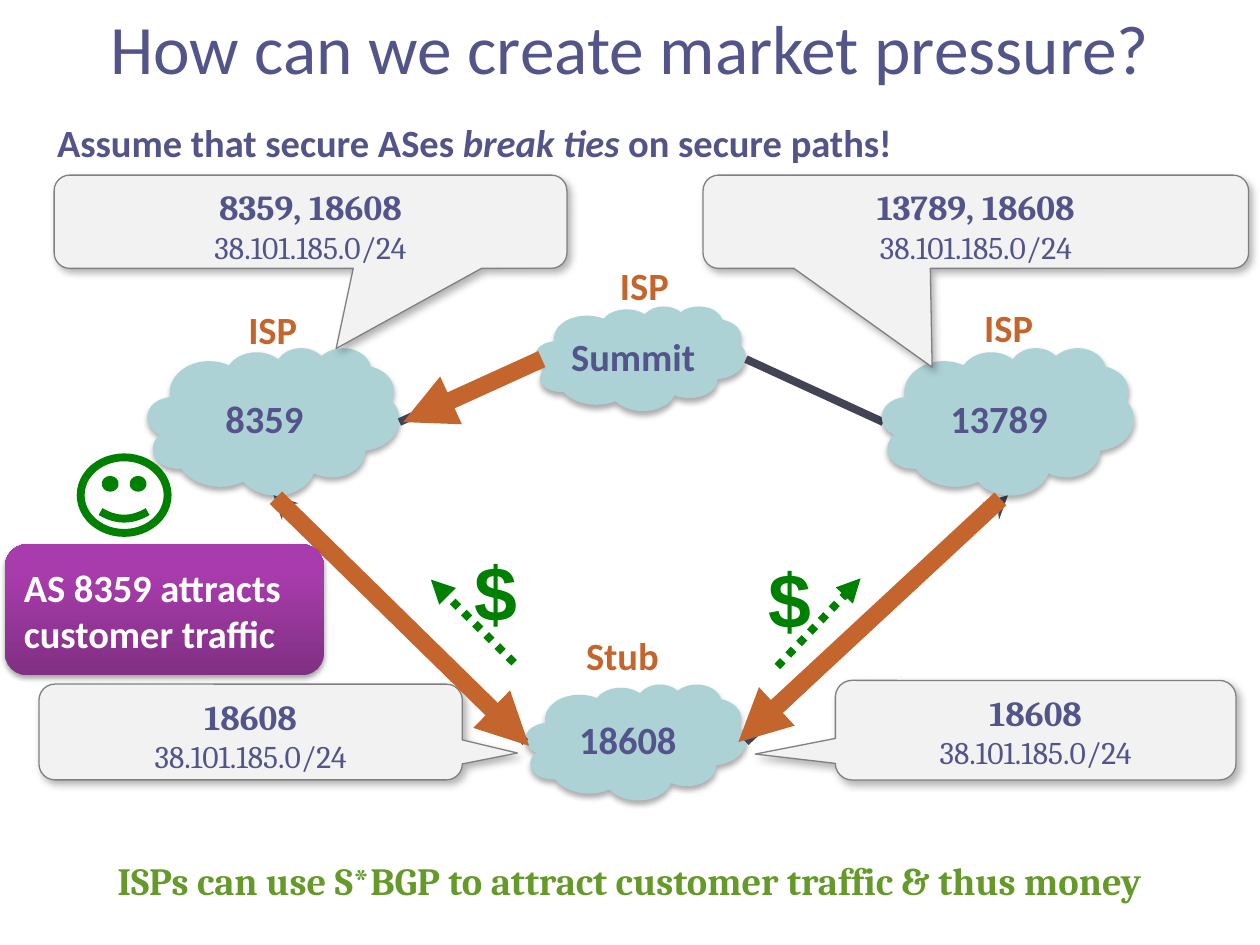
from lxml.etree import SubElement
from pptx import Presentation
from pptx.dml.color import RGBColor
from pptx.enum.dml import MSO_LINE
from pptx.enum.shapes import MSO_CONNECTOR, MSO_SHAPE
from pptx.enum.text import MSO_ANCHOR, PP_ALIGN
from pptx.oxml.ns import qn
from pptx.util import Emu, Pt

EMU_PER_PX = 9144
INDIGO = RGBColor(0x53, 0x54, 0x8A)
SLATE = RGBColor(0x42, 0x44, 0x56)
ORANGE = RGBColor(0xC4, 0x65, 0x2D)
CLOUD_BLUE = RGBColor(0xAD, 0xD2, 0xD6)
PALE_GRAY = RGBColor(0xF2, 0xF2, 0xF2)
MID_GRAY = RGBColor(0x80, 0x80, 0x80)
GREEN = RGBColor(0x00, 0x80, 0x00)
OLIVE = RGBColor(0x65, 0x9A, 0x2A)
DARK_PURPLE = RGBColor(0x80, 0x30, 0x83)
PURPLE = RGBColor(0xA9, 0x3C, 0xAD)
BLACK = RGBColor(0, 0, 0)
WHITE = RGBColor(0xFF, 0xFF, 0xFF)

CLOUD_SHADOW = (32, 3.5, 2.2, 90)
CALLOUT_SHADOW = (30, 4.5, 2.6, 53)
BANNER_SHADOW = (35, 3.1, 1.8, 90)


def px(*lengths):
    return [Emu(length * EMU_PER_PX) for length in lengths]


def add_run(paragraph, text, size=22, font="Calibri", color=INDIGO, bold=True, italic=False):
    run = paragraph.add_run()
    run.text = text
    run.font.size = Pt(size)
    run.font.name = font
    run.font.color.rgb = color
    run.font.bold = bold
    run.font.italic = italic


def cast_shadow(shape, opacity, blur, distance, angle):
    shape.shadow.inherit = False
    effects = shape._element.spPr.find(qn("a:effectLst"))
    outer = SubElement(effects, qn("a:outerShdw"), blurRad=str(Pt(blur)), dist=str(Pt(distance)),
                       dir=str(angle * 60000), algn="ctr", rotWithShape="0")
    tint = SubElement(outer, qn("a:srgbClr"), val=str(BLACK))
    SubElement(tint, qn("a:alpha"), val=str(opacity * 1000))


class Diagram:
    def __init__(self, presentation):
        self.slide = presentation.slides.add_slide(presentation.slide_layouts[5])
        self.shapes = self.slide.shapes

    def title(self, text, box):
        heading = self.shapes.title
        heading.left, heading.top, heading.width, heading.height = px(*box)
        self.paragraphs(heading.text_frame, [[(text, {"size": 39.6, "bold": False})]])

    def paragraphs(self, frame, lines, align=PP_ALIGN.CENTER, anchor=MSO_ANCHOR.MIDDLE, wrap=True):
        frame.word_wrap = wrap
        frame.vertical_anchor = anchor
        for index, runs in enumerate(lines):
            paragraph = frame.add_paragraph() if index else frame.paragraphs[0]
            paragraph.alignment = align
            for text, style in runs:
                add_run(paragraph, text, **style)

    def shape(self, preset, box, fill=None, line=None, weight=1, shadow=None):
        shape = self.shapes.add_shape(preset, *px(*box))
        shape.shadow.inherit = False
        if fill is None:
            shape.fill.background()
        else:
            shape.fill.solid()
            shape.fill.fore_color.rgb = fill
        if line is None:
            shape.line.fill.background()
        else:
            shape.line.color.rgb = line
            shape.line.width = Pt(weight)
        if shadow:
            cast_shadow(shape, *shadow)
        return shape

    def label(self, box, *runs, align=PP_ALIGN.CENTER):
        shape = self.shape(MSO_SHAPE.ROUNDED_RECTANGLE, box)
        self.paragraphs(shape.text_frame, [runs], align)

    def cloud(self, name, box):
        cloud = self.shape(MSO_SHAPE.CLOUD, box, CLOUD_BLUE, shadow=CLOUD_SHADOW)
        self.paragraphs(cloud.text_frame, [[(name, {})]], wrap=False)

    def callout(self, route, box, tip):
        callout = self.shape(MSO_SHAPE.ROUNDED_RECTANGULAR_CALLOUT, box, PALE_GRAY,
                             MID_GRAY, 0.75, CALLOUT_SHADOW)
        callout.adjustments[0], callout.adjustments[1] = tip
        self.paragraphs(callout.text_frame, [
            [(route, {"size": 20, "font": "Cambria"})],
            [("38.101.185.0/24", {"size": 18, "font": "Cambria", "bold": False})],
        ], anchor=MSO_ANCHOR.TOP)

    def line(self, start, end, color, weight, head=None, tail=None, dash=None):
        link = self.shapes.add_connector(MSO_CONNECTOR.STRAIGHT, *px(*start, *end))
        link.line.color.rgb = color
        link.line.width = Pt(weight)
        if dash:
            link.line.dash_style = dash
        outline = link.line._get_or_add_ln()
        for tag, arrow in (("a:headEnd", head), ("a:tailEnd", tail)):
            if arrow:
                SubElement(outline, qn(tag), type=arrow)
        SubElement(link._element.spPr, qn("a:effectLst"))

    def text(self, text, box, align=PP_ALIGN.LEFT, before=0, **style):
        frame = self.shapes.add_textbox(*px(*box)).text_frame
        self.paragraphs(frame, [[(text, style)]], align, MSO_ANCHOR.TOP)
        frame.paragraphs[0].space_before = Pt(before)

    def banner(self, text, box):
        banner = self.shape(MSO_SHAPE.ROUNDED_RECTANGLE, box, PURPLE, shadow=BANNER_SHADOW)
        banner.fill.gradient()
        banner.fill.gradient_angle = 90
        bottom, top = banner.fill.gradient_stops
        bottom.color.rgb, bottom.position = DARK_PURPLE, 0
        top.color.rgb, top.position = PURPLE, 0.8
        self.paragraphs(banner.text_frame, [[(text, {"color": WHITE})]], PP_ALIGN.LEFT)


def main():
    presentation = Presentation()
    presentation.slide_width, presentation.slide_height = px(1000, 750)
    diagram = Diagram(presentation)
    diagram.title("How can we create market pressure?", (0, 0, 1000, 75))

    for left, top in ((458, 192), (747, 226), (163, 227)):
        diagram.label((left, top, 107, 68), ("ISP", {"color": ORANGE}))
    diagram.label((452, 486, 107, 68), ("Stub", {"color": ORANGE}), align=PP_ALIGN.LEFT)

    diagram.cloud("8359", (117, 276, 200, 117))
    diagram.cloud("Summit", (425, 243, 167, 83))
    diagram.cloud("18608", (417, 543, 175, 92))
    for start, end, tail in (
        ((592, 589), (800, 393), "stealth"),
        ((417, 589), (217, 393), "stealth"),
        ((317, 335), (426, 285), None),
        ((592, 285), (701, 335), None),
    ):
        diagram.line(start, end, SLATE, 4.5, tail=tail)
    diagram.cloud("13789", (700, 276, 200, 117))

    diagram.callout("18608", (31, 543, 336, 76), (0.63, 0.22))
    diagram.callout("8359, 18608", (43, 139, 407, 74), (0.05, 1.36))
    for start, end in (
        ((586, 589), (794, 396)),
        ((420, 592), (219, 395)),
        ((320, 335), (430, 285)),
    ):
        diagram.line(start, end, ORANGE, 10, head="triangle")
    diagram.shape(MSO_SHAPE.SMILEY_FACE, (64, 363, 69, 60), WHITE, GREEN, 4.5)
    diagram.callout("18608", (663, 540, 318, 79), (-0.7, 0.24))
    diagram.callout("13789, 18608", (558, 139, 433, 74), (-0.08, 1.56))

    diagram.text("ISPs can use S*BGP to attract customer traffic & thus money",
                 (-17, 675, 1033, 49), PP_ALIGN.CENTER, before=4.4, font="Cambria", color=OLIVE)
    for start, end, dollar_box in (
        ((408, 526), (342, 460), (367, 427, 42, 84)),
        ((617, 529), (683, 459), (600, 433, 67, 84)),
    ):
        diagram.line(start, end, GREEN, 4.5, tail="triangle", dash=MSO_LINE.ROUND_DOT)
        diagram.text("$", dollar_box, size=44, font="Arial", color=GREEN)

    diagram.label((31, 67, 894, 92), ("Assume that secure ASes ", {}),
                  ("break ties", {"italic": True}), (" on secure paths!", {}),
                  align=PP_ALIGN.LEFT)
    diagram.banner("AS 8359 attracts customer traffic", (4, 432, 253, 104))
    presentation.save("out.pptx")


if __name__ == "__main__":
    main()
